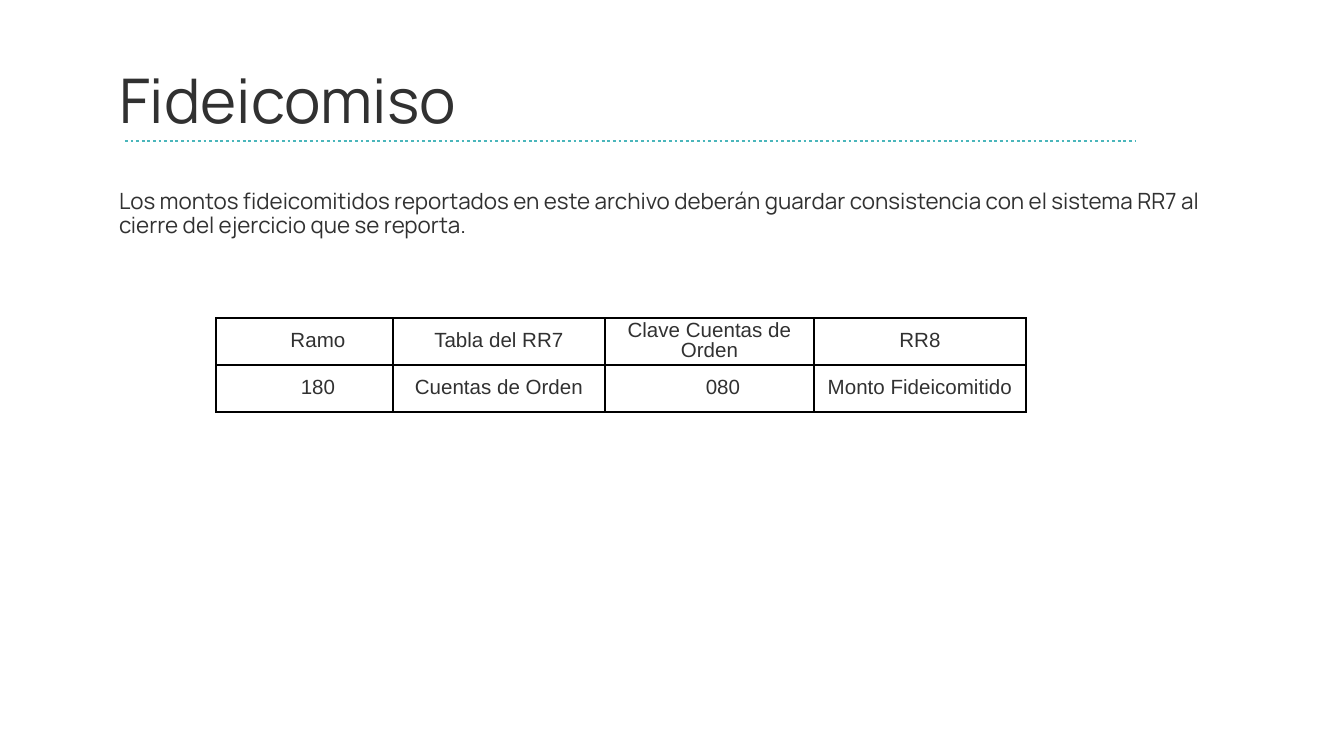
"""Builds the Fideicomiso slide with its table of accounts."""
from dataclasses import dataclass

from lxml import etree
from pptx import Presentation
from pptx import util as u
from pptx.dml.color import RGBColor
from pptx.enum import dml, shapes, text
from pptx.oxml import ns

SCALE = 914400 / 134.4


def px(size):
    """Turn px into EMU."""
    return u.Emu(round(size * SCALE))


def sub(parent, tag, **attrs):
    """Append a DrawingML element with its attributes."""
    return etree.SubElement(parent, ns.qn(tag), {k: str(v) for k, v in attrs.items()})


@dataclass(frozen=True)
class Theme:
    """Colours, fonts and sizes of the slide."""

    ink: str = "313131"
    rule: str = "4AB6BB"
    edge: str = "000000"
    paper: str = "FFFFFF"
    face: str = "Manrope"
    grid: str = "Arial"
    head: float = 33
    body: float = 12
    cell: float = 11


class Deck:
    """Holds the theme and the current slide."""

    def __init__(self, theme):
        """Start a file with one slide."""
        self.theme = theme
        self.file = Presentation()
        self.file.slide_width, self.file.slide_height = px(1344), px(756)
        self.slide = self.file.slides.add_slide(self.file.slide_layouts[1])

    def run(self, par, words, face, size):
        """Add one styled run to a paragraph."""
        run = par.add_run()
        run.text = words
        run.font.name, run.font.size = face, u.Pt(size)
        run.font.color.rgb = RGBColor.from_string(self.theme.ink)

    def holder(self, index, box, words, size, lead=1.0):
        """Move and fill a template placeholder."""
        shape = self.slide.placeholders[index]
        shape.left, shape.top, shape.width, shape.height = map(px, box)
        frame = shape.text_frame
        frame.word_wrap = True
        frame.auto_size = text.MSO_AUTO_SIZE.NONE
        frame.vertical_anchor = text.MSO_ANCHOR.MIDDLE
        frame.margin_left = frame.margin_right = px(13)
        frame.margin_top = frame.margin_bottom = px(13)
        par = frame.paragraphs[0]
        props = par._p.get_or_add_pPr()
        props.set("marL", "0")
        props.set("indent", "0")
        sub(props, "a:buNone")
        par.alignment = text.PP_ALIGN.LEFT
        par.space_before = u.Pt(0)
        par.line_spacing = lead
        self.run(par, words, self.theme.face, size)

    def line(self, left, right, top):
        """Draw a dotted level rule."""
        rule = self.slide.shapes.add_connector(
            shapes.MSO_CONNECTOR.STRAIGHT, px(left), px(top), px(right), px(top))
        rule.line.color.rgb = RGBColor.from_string(self.theme.rule)
        rule.line.width = u.Pt(1.5)
        rule.line.dash_style = dml.MSO_LINE.ROUND_DOT
        sub(rule._element.spPr, "a:effectLst")

    def border(self, cell):
        """Draw the four edges of a cell."""
        props = cell._tc.get_or_add_tcPr()
        for side in ("a:lnL", "a:lnR", "a:lnT", "a:lnB"):
            edge = sub(props, side, w=u.Pt(1))
            sub(sub(edge, "a:solidFill"), "a:srgbClr", val=self.theme.edge)

    def entry(self, cell, words, hang):
        """Fill one cell, with a hanging indent if asked."""
        self.border(cell)
        cell.fill.solid()
        cell.fill.fore_color.rgb = RGBColor.from_string(self.theme.paper)
        cell.vertical_anchor = text.MSO_ANCHOR.MIDDLE
        cell.margin_left = cell.margin_right = px(9)
        cell.margin_top = cell.margin_bottom = 0
        par = cell.text_frame.paragraphs[0]
        if hang:
            props = par._p.get_or_add_pPr()
            props.set("marL", str(px(67)))
            props.set("indent", str(px(-40)))
            sub(sub(props, "a:tabLst"), "a:tab", pos=px(67), algn="l")
        par.alignment = text.PP_ALIGN.CENTER
        par.line_spacing, par.space_after = u.Pt(10.8), u.Pt(6)
        self.run(par, words, self.theme.grid, self.theme.cell)

    def table(self, left, top, widths, tall, rows, hung):
        """Add a bordered table with rows of equal height."""
        table = self.slide.shapes.add_table(
            len(rows), len(widths), px(left), px(top),
            px(sum(widths)), px(tall * len(rows))).table
        table.first_row = table.horz_banding = False
        for col, width in zip(table.columns, widths):
            col.width = px(width)
        for r, row in enumerate(rows):
            table.rows[r].height = px(tall)
            for c, words in enumerate(row):
                self.entry(table.cell(r, c), words, words in hung)


def main():
    """Build and save the slide."""
    theme = Theme()
    deck = Deck(theme)
    deck.holder(0, (106, 56, 933, 85), "Fideicomiso", theme.head)
    deck.holder(1, (106, 157, 1133, 114),
                "Los montos fideicomitidos reportados en este archivo deberán guardar "
                "consistencia con el sistema RR7 al cierre del ejercicio que se reporta.",
                theme.body, 0.9)
    deck.line(125, 1136, 141)
    deck.table(216, 318, (177, 212, 209, 212), 47, (
        ("Ramo", "Tabla del RR7", "Clave Cuentas de Orden", "RR8"),
        ("180", "Cuentas de Orden", "080", "Monto Fideicomitido"),
    ), ("Ramo", "180", "080"))
    deck.file.save("out.pptx")


if __name__ == "__main__":
    main()
